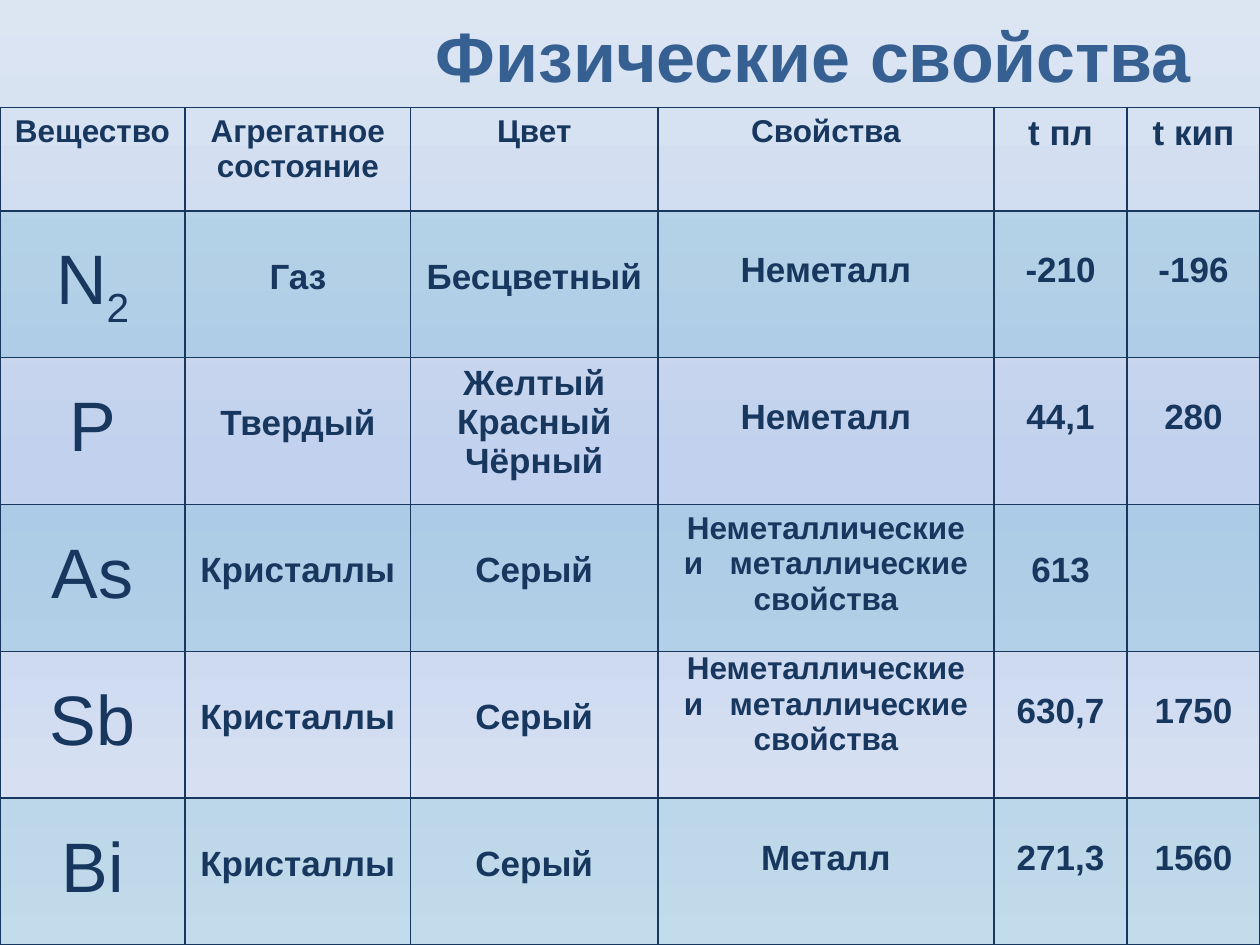
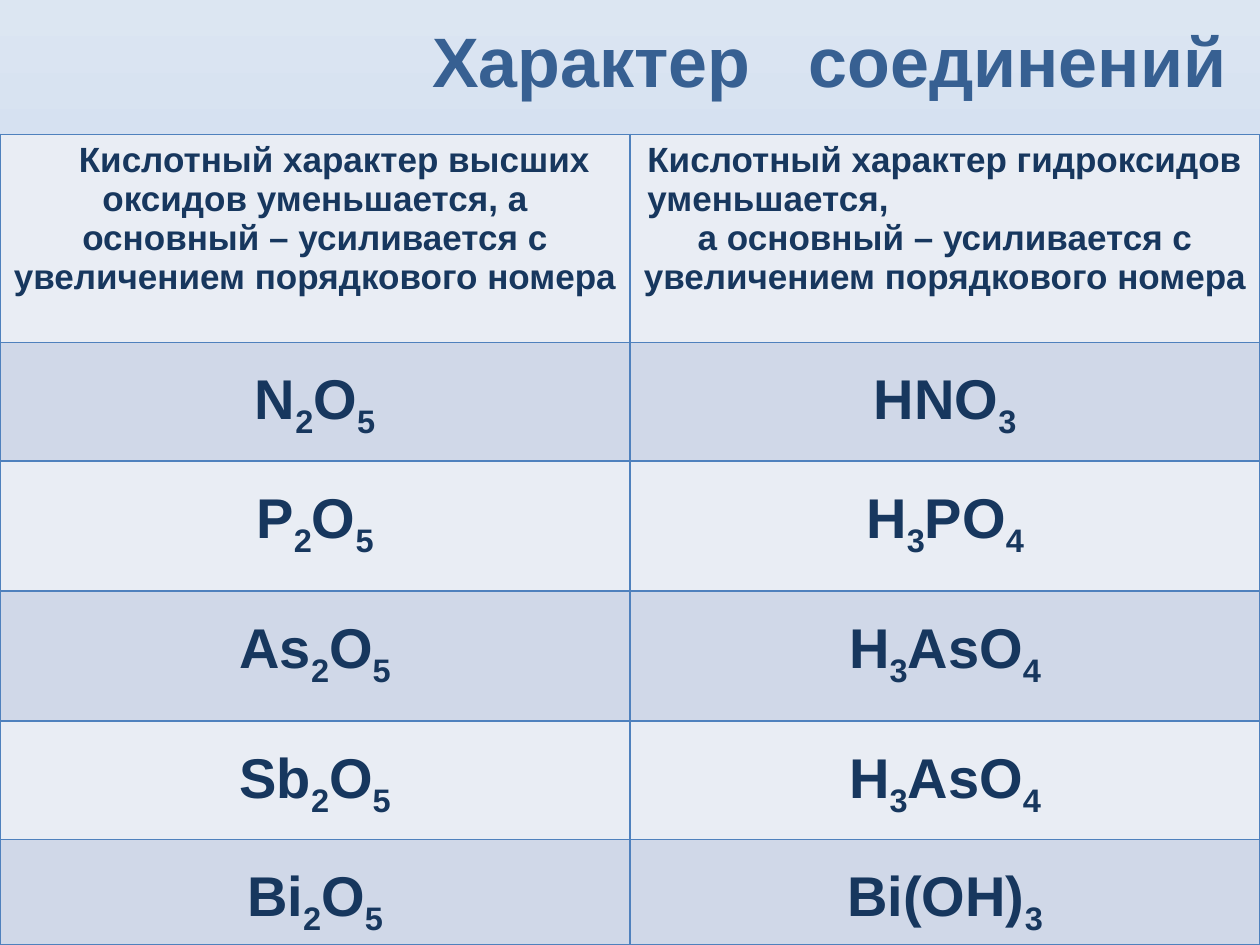
from copy import deepcopy
from dataclasses import dataclass
from itertools import groupby

from lxml.etree import SubElement
from pptx import Presentation
from pptx.dml.color import RGBColor
from pptx.enum.text import MSO_ANCHOR, PP_ALIGN
from pptx.oxml.ns import qn
from pptx.util import Cm, Pt

# Shared look
FONT = "Arial"
NAVY, TITLE_BLUE, GRID_BLUE = "17375E", "376092", "4F81BD"
CYAN, PALE, GREY_BLUE = "4BACC6", "E9EDF4", "D0D8E8"
BACKGROUND = [(0, "DCE6F2"), (0.5, "C2D1ED"), (1, "E1E8F5")]
TITLE_ONLY = 5
WIDE_GAP = "~"  # marks a space three times as wide as usual
SPACE_WIDTH = 0.28  # share of the font size
INSET = 0.13


@dataclass(frozen=True)
class TextStyle:
    size: int
    bold: bool = True
    color: str = NAVY
    align: PP_ALIGN = PP_ALIGN.CENTER
    formula: bool = False
    margin: float = 0
    indent: float = 0


@dataclass(frozen=True)
class CellLook:
    fill: str | None = None
    alpha: int = 100
    top: float = INSET
    side: float = 0.25
    bottom: float = INSET


@dataclass(frozen=True)
class Grid:
    top: float
    columns: list[float]
    rows: list[float]
    border: str


HEADING = TextStyle(40, color=TITLE_BLUE, align=PP_ALIGN.RIGHT)
HEADER = TextStyle(18)
HEADER_LARGE = TextStyle(20)
ELEMENT = TextStyle(40, bold=False, formula=True)
VALUE = TextStyle(20)
COMPOUND = TextStyle(32, formula=True)

PROPERTIES_GRID = Grid(2.17, [3.73, 4.55, 4.98, 6.78, 2.68, 2.68],
                       [2.08] + [2.96] * 5, NAVY)
COMPOUNDS_GRID = Grid(2.71, [12.7, 12.7],
                      [4.19, 2.39, 2.62, 2.62, 2.39, 2.13], GRID_BLUE)

MIXED = "Неметаллические~и~металлические свойства"
PROPERTIES = [
    ("Вещество", "Агрегатное состояние", "Цвет", "Свойства", "t пл", "t кип"),
    ("N2", "Газ", "Бесцветный", "Неметалл", "-210", "-196"),
    ("P", "Твердый", "Желтый\nКрасный\nЧёрный", "Неметалл", "44,1", "280"),
    ("As", "Кристаллы", "Серый", MIXED, "613", ""),
    ("Sb", "Кристаллы", "Серый", MIXED, "630,7", "1750"),
    ("Bi", "Кристаллы", "Серый", "Металл", "271,3", "1560"),
]
COMPOUNDS = [
    ("N2O5", "HNO3"),
    ("P2O5", "H3PO4"),
    ("As2O5", "H3AsO4"),
    ("Sb2O5", "H3AsO4"),
    ("Bi2O5", "Bi(OH)3"),
]
OXIDES = ("Кислотный характер высших оксидов уменьшается, а основный – "
          "усиливается с увеличением порядкового номера")
HYDROXIDES = ("Кислотный характер гидроксидов уменьшается,",
              "а основный – усиливается с увеличением порядкового номера")


def rgb(color: str) -> RGBColor:
    return RGBColor.from_string(color)


def set_all(target, values: dict) -> None:
    for name, value in values.items():
        setattr(target, name, value)


# Text
def write(para, text: str, style: TextStyle) -> None:
    para.alignment = style.align
    if style.margin or style.indent:
        properties = para._p.get_or_add_pPr()
        properties.set("marL", str(Cm(style.margin)))
        properties.set("indent", str(Cm(style.indent)))

    def kind(letter: str) -> str:
        if letter == WIDE_GAP:
            return "gap"
        return "low" if style.formula and letter.isdigit() else "plain"

    for name, letters in groupby(text, kind):
        span = para.add_run()
        span.text = " " if name == "gap" else "".join(letters)
        set_all(span.font, {"name": FONT, "size": Pt(style.size),
                            "bold": style.bold})
        span.font.color.rgb = rgb(style.color)
        properties = span._r.get_or_add_rPr()
        if name == "gap":
            properties.set("spc", str(round(200 * SPACE_WIDTH * style.size)))
        elif name == "low":
            properties.set("baseline", "-25000")


def write_lines(frame, lines: list[tuple[str, TextStyle]]) -> None:
    for number, (text, style) in enumerate(lines):
        para = frame.add_paragraph() if number else frame.paragraphs[0]
        write(para, text, style)


# Pages and tables
def paint_background(deck) -> None:
    fill = deck.slide_master.background.fill
    fill.gradient()
    fill.gradient_angle = 270
    first = fill.gradient_stops[0]._gs
    first.addnext(deepcopy(first))
    for stop, (position, color) in zip(fill.gradient_stops, BACKGROUND):
        stop.position = position
        stop.color.rgb = rgb(color)


def add_page(deck, title: str, left: float, top: float, height: float):
    page = deck.slides.add_slide(deck.slide_layouts[TITLE_ONLY])
    box = page.shapes.title
    set_all(box, {"left": Cm(left), "top": Cm(top),
                  "width": Cm(22.86), "height": Cm(height)})
    set_all(box.text_frame, {"vertical_anchor": MSO_ANCHOR.MIDDLE,
                             "word_wrap": True})
    write(box.text_frame.paragraphs[0], title, HEADING)
    return page


def add_grid(page, grid: Grid):
    table = page.shapes.add_table(
        len(grid.rows), len(grid.columns), Cm(0), Cm(grid.top),
        Cm(sum(grid.columns)), Cm(sum(grid.rows))).table
    set_all(table, {"first_row": False, "horz_banding": False})
    for column, width in zip(table.columns, grid.columns):
        column.width = Cm(width)
    for row, height in zip(table.rows, grid.rows):
        row.height = Cm(height)
    return table


def add_borders(cell, color: str) -> None:
    properties = cell._tc.get_or_add_tcPr()
    for place, side in enumerate(("lnL", "lnR", "lnT", "lnB")):
        line = SubElement(properties, qn(f"a:{side}"), w=str(Pt(1)))
        fill = SubElement(line, qn("a:solidFill"))
        SubElement(fill, qn("a:srgbClr"), val=color)
        properties.insert(place, line)


def fill_cell(cell, lines: list[tuple[str, TextStyle]], look: CellLook,
              border: str) -> None:
    set_all(cell, {"margin_left": Cm(look.side), "margin_right": Cm(look.side),
                   "margin_top": Cm(look.top), "margin_bottom": Cm(look.bottom),
                   "vertical_anchor": MSO_ANCHOR.TOP})
    if look.fill:
        cell.fill.solid()
        cell.fill.fore_color.rgb = rgb(look.fill)
        if look.alpha < 100:
            shade = cell._tc.tcPr.find(".//" + qn("a:srgbClr"))
            SubElement(shade, qn("a:alpha"), val=str(look.alpha * 1000))
    else:
        cell.fill.background()
    add_borders(cell, border)
    write_lines(cell.text_frame, lines)


# Slide 1: physical properties
def property_style(row: int, column: int, text: str) -> TextStyle:
    if row == 0:
        return HEADER_LARGE if column >= 4 else HEADER
    if column == 0:
        return ELEMENT
    return HEADER if text == MIXED else VALUE


def property_look(row: int, column: int, text: str) -> CellLook:
    tight = column >= 3 and row not in (0, 3)
    inset = 0 if tight else INSET
    if row == 0 or text == MIXED or "\n" in text:
        lead = 0
    else:
        lead = 0.49 if column == 0 else 0.81
    return CellLook(fill=CYAN if row % 2 else None, alpha=20,
                    top=inset + lead, side=0.2 if tight else 0.25,
                    bottom=inset)


def add_properties_page(deck) -> None:
    page = add_page(deck, "Физические свойства", 1.4, 0, 2.18)
    table = add_grid(page, PROPERTIES_GRID)
    for row, texts in enumerate(PROPERTIES):
        for column, text in enumerate(texts):
            style = property_style(row, column, text)
            lines = [(line, style) for line in text.splitlines()]
            fill_cell(table.cell(row, column), lines,
                      property_look(row, column, text), PROPERTIES_GRID.border)


# Slide 2: oxides and hydroxides
def add_compounds_page(deck) -> None:
    page = add_page(deck, "Характер~соединений", 2.11, 0.33, 1.75)
    table = add_grid(page, COMPOUNDS_GRID)
    headers = [
        [(OXIDES, TextStyle(20, indent=0.78))],
        [(HYDROXIDES[0], TextStyle(20, align=PP_ALIGN.LEFT, margin=0.1)),
         (HYDROXIDES[1], VALUE)],
    ]
    body = [[[(text, COMPOUND)] for text in texts] for texts in COMPOUNDS]
    for row, cells in enumerate([headers] + body):
        look = CellLook(fill=GREY_BLUE if row % 2 else PALE,
                        top=INSET + (0.41 if row else 0))
        for column, lines in enumerate(cells):
            fill_cell(table.cell(row, column), lines, look,
                      COMPOUNDS_GRID.border)


def main() -> None:
    deck = Presentation()
    set_all(deck, {"slide_width": Cm(25.4), "slide_height": Cm(19.05)})
    paint_background(deck)
    add_properties_page(deck)
    add_compounds_page(deck)
    deck.save("out.pptx")


if __name__ == "__main__":
    main()
